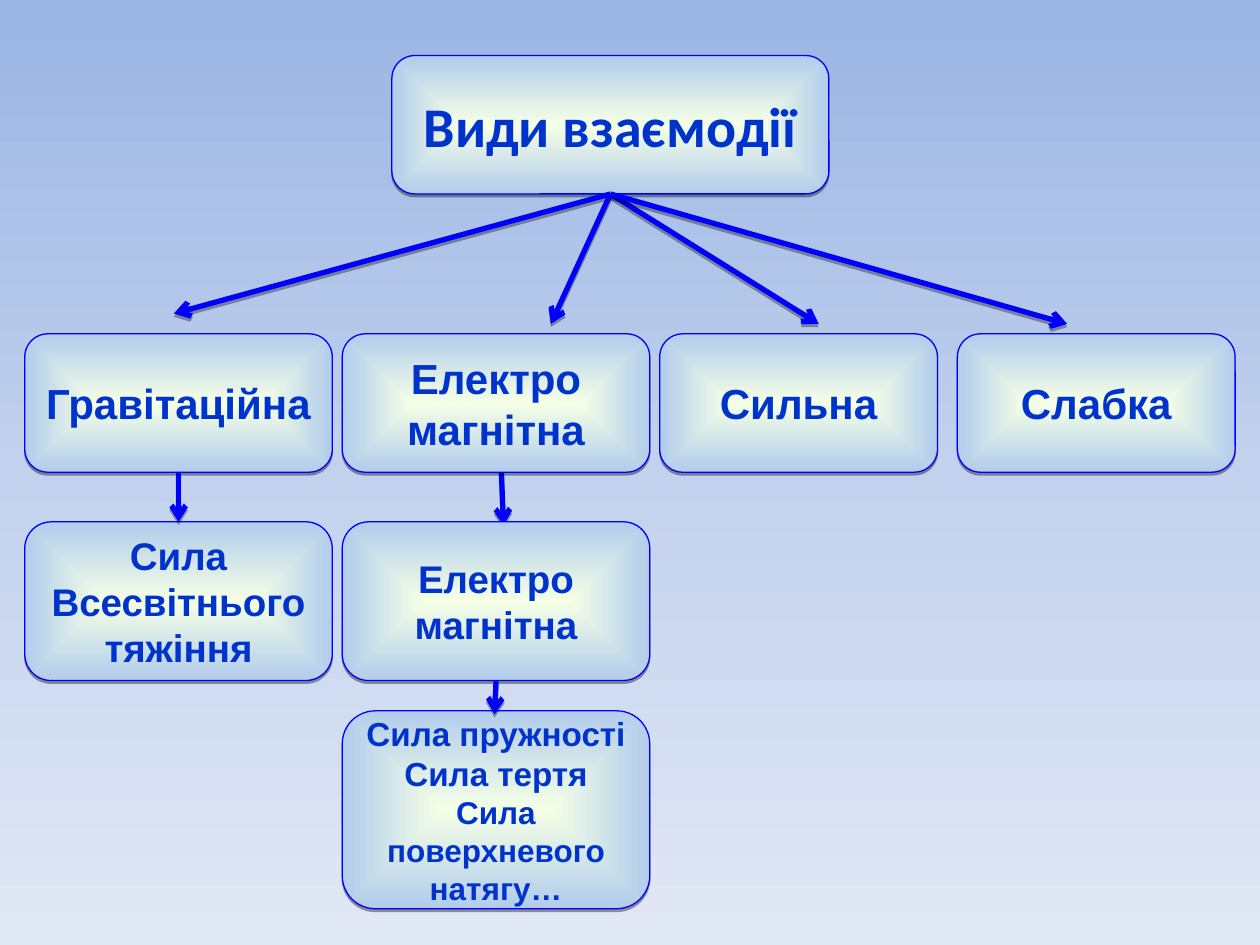
from lxml.etree import SubElement
from pptx import Presentation
from pptx.dml.color import RGBColor
from pptx.enum.shapes import MSO_CONNECTOR, MSO_SHAPE
from pptx.enum.text import MSO_ANCHOR, PP_ALIGN
from pptx.oxml import parse_xml
from pptx.oxml.ns import nsdecls, qn
from pptx.util import Cm, Pt

BLUE, INK = "0000FF", "0033CC"
LINEAR = '<a:lin ang="5400000" scaled="0"/>'
CENTRE = ('<a:path path="shape"><a:fillToRect l="50000" t="50000" '
          'r="50000" b="50000"/></a:path>')


def color(value):
    return RGBColor.from_string(value)


def blend(fill, root, stops, shade):
    """Fill with a gradient of (percent, colour) stops."""
    fill.gradient()
    marks = "".join(f'<a:gs pos="{pos * 1000}"><a:srgbClr val="{tone}"/></a:gs>'
                    for pos, tone in stops)
    old = root.find(".//" + qn("a:gradFill"))
    new = parse_xml(f'<a:gradFill {nsdecls("a")} rotWithShape="1">'
                    f'<a:gsLst>{marks}</a:gsLst>{shade}</a:gradFill>')
    old.getparent().replace(old, new)


def shadow(shape, dist, alpha):
    """Cast a hard shadow straight down."""
    props = shape._element.spPr
    for old in props.findall(qn("a:effectLst")):
        props.remove(old)
    props.append(parse_xml(
        f'<a:effectLst {nsdecls("a")}><a:outerShdw blurRad="0" dist="{Pt(dist)}" '
        f'dir="5400000" rotWithShape="0"><a:srgbClr val="000000">'
        f'<a:alpha val="{alpha * 1000}"/></a:srgbClr></a:outerShdw></a:effectLst>'))


def card(slide, box, lines, font="Arial"):
    """Rounded box holding (text, size) lines."""
    shape = slide.shapes.add_shape(MSO_SHAPE.ROUNDED_RECTANGLE, *map(Cm, box))
    blend(shape.fill, shape._element.spPr,
          [(0, "F5FFE6"), (100, "B2CCEC")], CENTRE)
    shape.line.color.rgb = color(BLUE)
    shape.line.width = Pt(0.75)
    shadow(shape, 1.6, 38)
    frame = shape.text_frame
    frame.word_wrap = True
    frame.vertical_anchor = MSO_ANCHOR.MIDDLE
    for i, (text, size) in enumerate(lines):
        para = frame.add_paragraph() if i else frame.paragraphs[0]
        para.text = text
        para.alignment = PP_ALIGN.CENTER
        para.font.name = font
        para.font.size = Pt(size)
        para.font.bold = True
        para.font.color.rgb = color(INK)
    return shape


def arrow(slide, start, end, source=None, target=None):
    """Arrow joined to the bottom of source and the top of target, if given."""
    link = slide.shapes.add_connector(
        MSO_CONNECTOR.STRAIGHT, *map(Cm, (*start, *end)))
    if source is not None:
        link.begin_connect(source, 2)
    if target is not None:
        link.end_connect(target, 0)
    link.line.color.rgb = color(BLUE)
    link.line.width = Pt(3)
    SubElement(link.line._get_or_add_ln(), qn("a:tailEnd"), type="arrow")
    shadow(link, 1.8, 35)


def header(slide, box, tips):
    """Title box with arrows fanning out to tips, relative to its bottom centre."""
    left, top, width, height = box
    title = card(slide, box, [("Види взаємодії", 32)], "Calibri")
    x, y = left + width / 2, top + height
    for dx, dy in tips:
        arrow(slide, (x, y), (x + dx, y + dy), title)


def gravity(slide, box):
    """Gravitational column."""
    left, top, width, _ = box
    mid = left + width / 2
    kind = card(slide, (left, top, width, 2.79), [("Гравітаційна", 24)])
    force = card(slide, (left, top + 3.79, width, 3.2),
                 [("Сила Всесвітнього тяжіння", 22)])
    arrow(slide, (mid, top + 2.79), (mid, top + 3.79), kind, force)


def electro(slide, box):
    """Electromagnetic column."""
    left, top, width, height = box
    mid = left + width / 2
    names = ["Електро", "магнітна"]
    arrow(slide, (mid + 0.1, top + 2.6), (mid + 0.15, top + 3.86))
    card(slide, (left, top, width, 2.79), [(name, 24) for name in names])
    force = card(slide, (left, top + 3.79, width, 3.2),
                 [(name, 22) for name in names])
    card(slide, (left, top + 7.6, width, height - 7.6),
         [("Сила пружності", 19), ("Сила тертя", 19),
          ("Сила поверхневого натягу…", 18)])
    arrow(slide, (mid, top + 6.99), (mid - 0.03, top + 7.67), force)


def main():
    deck = Presentation()
    deck.slide_width, deck.slide_height = Cm(25.4), Cm(19.05)
    slide = deck.slides.add_slide(deck.slide_layouts[6])
    blend(slide.background.fill, slide.element,
          [(0, "9AB5E4"), (50, "C2D1ED"), (100, "E1E8F5")], LINEAR)

    header(slide, (7.9, 1.12, 8.81, 2.79),
           [(-8.8, 2.41), (-1.2, 2.62), (4.2, 2.62), (9.21, 2.62)])
    row = 6.73
    gravity(slide, (0.5, row, 6.2, 6.99))
    electro(slide, (6.9, row, 6.2, 11.59))
    # Kinds without further branches
    for left, name in [(13.3, "Сильна"), (19.3, "Слабка")]:
        card(slide, (left, row, 5.6, 2.79), [(name, 24)])
    deck.save("out.pptx")


if __name__ == "__main__":
    main()
